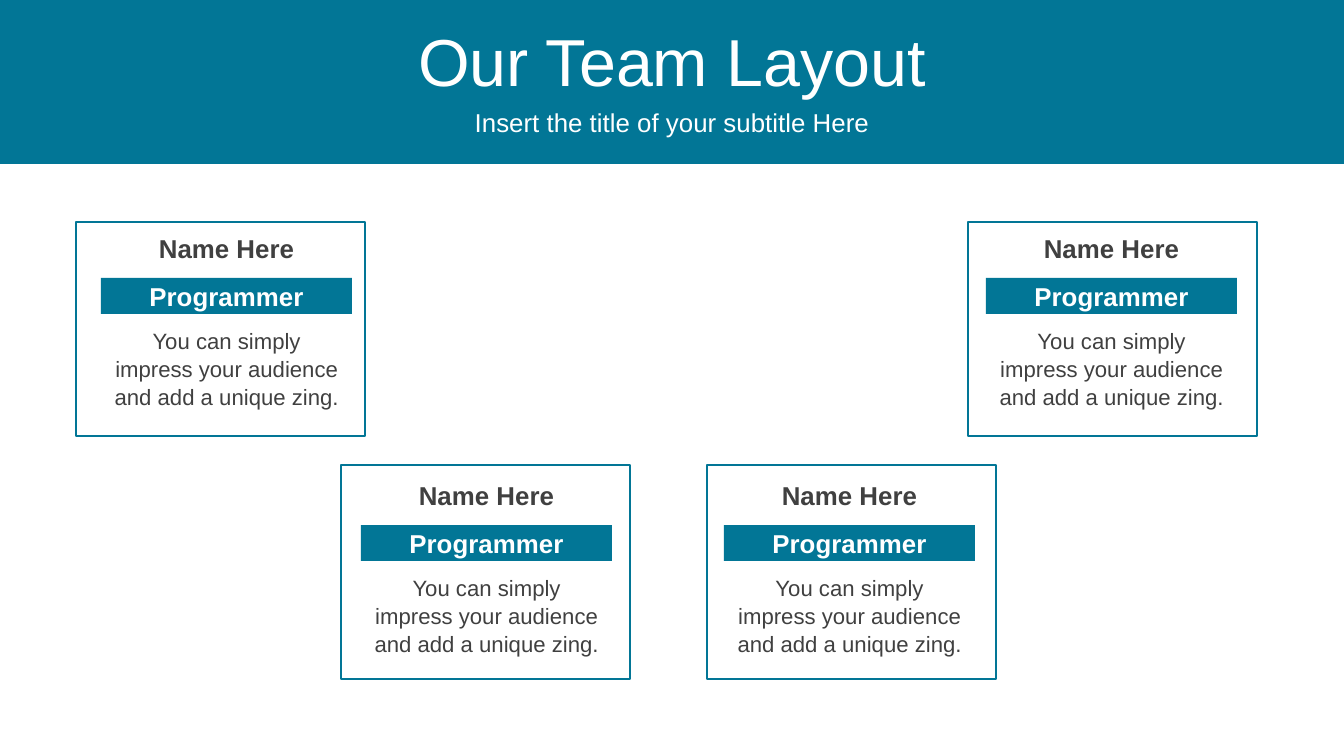
from dataclasses import dataclass

from pptx import Presentation
from pptx.dml.color import RGBColor
from pptx.enum.shapes import MSO_SHAPE
from pptx.enum.text import MSO_ANCHOR, PP_ALIGN
from pptx.util import Pt

RECT = MSO_SHAPE.RECTANGLE
CENTER = PP_ALIGN.CENTER
TOP, MIDDLE = MSO_ANCHOR.TOP, MSO_ANCHOR.MIDDLE
EMU_PER_PX = 7234
SLIDE_W, SLIDE_H = 1344, 747


@dataclass(frozen=True)
class Theme:
    teal: RGBColor = RGBColor(0x02, 0x76, 0x96)
    white: RGBColor = RGBColor(0xFF, 0xFF, 0xFF)
    gray: RGBColor = RGBColor(0x40, 0x40, 0x40)
    font: str = "Arial"
    title: float = 37.8
    label: float = 14.7
    body: float = 12.6
    border: float = 1.5


THEME = Theme()
FRAME_W, FRAME_H = 289, 214
# frame left, frame top, text left, name top
MEMBERS = [
    (76, 222, 101, 231),
    (968, 222, 986, 231),
    (707, 465, 724, 478),
    (341, 465, 361, 478),
]
TEXT_W = 251
ROLE_DY, BLURB_DY = 47, 95
NAME = "Name Here"
ROLE = "Programmer"
BLURB = "You can simply impress your audience and add a unique zing."


def px(*lengths):
    return [n * EMU_PER_PX for n in lengths]


def add_rect(shapes, box, fill=None, line=None):
    sp = shapes.add_shape(RECT, *px(*box))
    sp.shadow.inherit = False
    if fill is None:
        sp.fill.background()
    else:
        sp.fill.solid()
        sp.fill.fore_color.rgb = fill
    if line is None:
        sp.line.fill.background()
    else:
        sp.line.color.rgb = line
        sp.line.width = Pt(THEME.border)
    return sp


def set_text(sp, text, size, color, bold=False, anchor=MIDDLE, para=None):
    """Write one centred paragraph; space before is a fifth of the size unless para is given."""
    tf = sp.text_frame
    frame = {"word_wrap": True, "vertical_anchor": anchor,
             "margin_top": 0, "margin_bottom": 0}
    for key, value in frame.items():
        setattr(tf, key, value)
    p = tf.paragraphs[0]
    para = para or {"space_before": Pt(size * 0.2)}
    for key, value in {"alignment": CENTER, **para}.items():
        setattr(p, key, value)
    r = p.add_run()
    r.text = text
    for key, value in {"name": THEME.font, "size": Pt(size), "bold": bold}.items():
        setattr(r.font, key, value)
    r.font.color.rgb = color


def add_text(shapes, box, *args, **formats):
    set_text(shapes.add_textbox(*px(*box)), *args, **formats)


def add_header(shapes):
    add_rect(shapes, (0, 0, SLIDE_W, 164), fill=THEME.teal)
    add_text(shapes, (0, 18, SLIDE_W, 83), "Our Team Layout", THEME.title, THEME.white)
    add_text(shapes, (0, 101, SLIDE_W, 42), "Insert the title of your subtitle Here",
             THEME.label, THEME.white)


def add_member(shapes, frame_x, frame_y, x, y):
    add_rect(shapes, (frame_x, frame_y, FRAME_W, FRAME_H), line=THEME.teal)
    group = shapes.add_group_shape().shapes
    add_text(group, (x, y, TEXT_W, 35), NAME, THEME.label, THEME.gray, bold=True)
    role = add_rect(group, (x, y + ROLE_DY, TEXT_W, 36), fill=THEME.teal)
    set_text(role, ROLE, THEME.label, THEME.white, bold=True)
    add_text(group, (x, y + BLURB_DY, TEXT_W, 94), BLURB, THEME.body, THEME.gray,
             anchor=TOP, para={"line_spacing": 1.05})


def main():
    prs = Presentation()
    prs.slide_width, prs.slide_height = px(SLIDE_W, SLIDE_H)
    s = prs.slides.add_slide(prs.slide_layouts[6])
    add_header(s.shapes)
    for member in MEMBERS:
        add_member(s.shapes, *member)
    prs.save("out.pptx")


if __name__ == "__main__":
    main()
